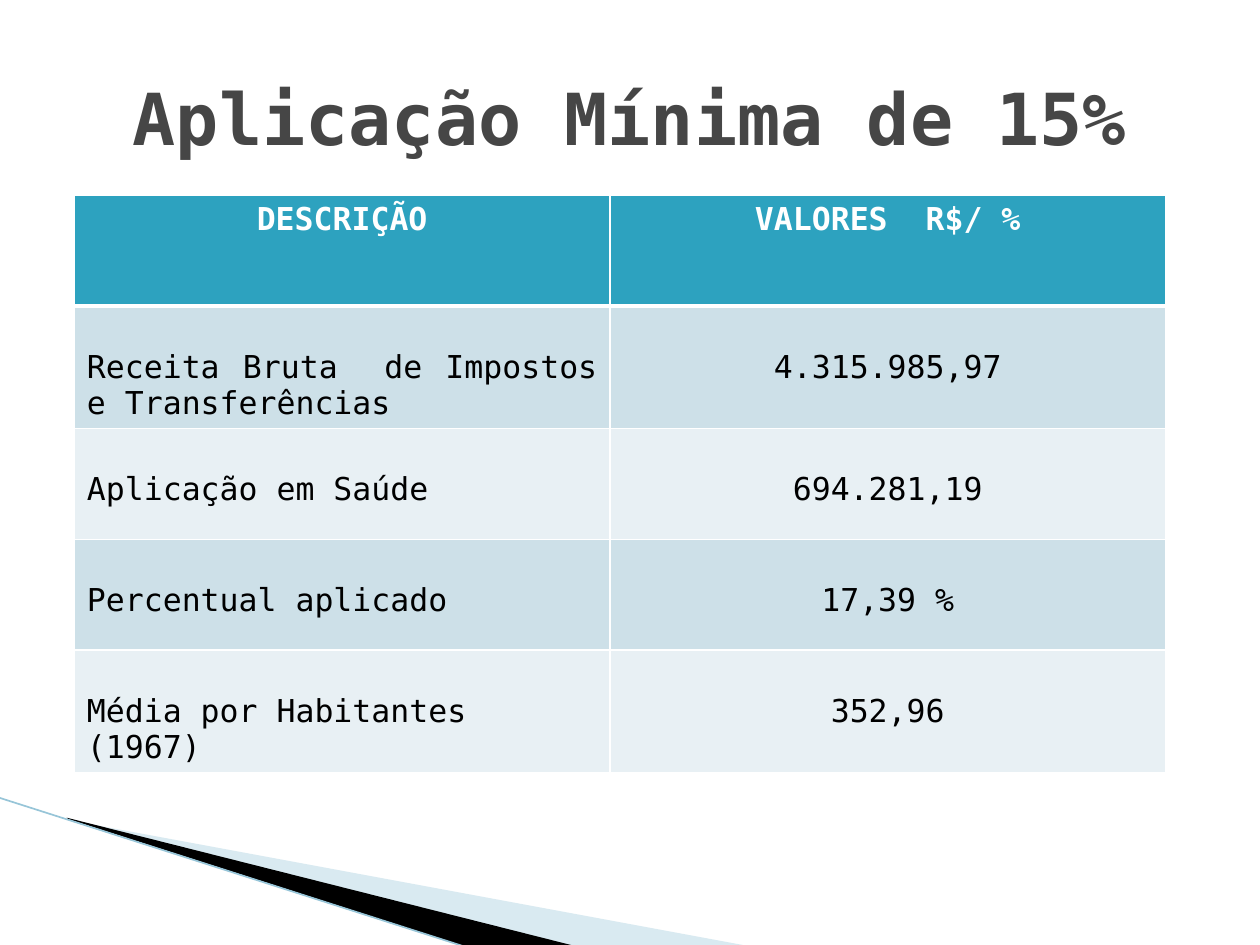
from typing import NamedTuple

from lxml import etree
from pptx import Presentation, util as u
from pptx.dml.color import RGBColor
from pptx.enum import shapes, text
from pptx.oxml.ns import qn

FONT = "DejaVu Sans Mono"
LEFT, MID, FULL = text.PP_ALIGN.LEFT, text.PP_ALIGN.CENTER, text.PP_ALIGN.JUSTIFY


class Wedge(NamedTuple):
    points: list[tuple[float, float]]
    color: str
    alpha: int = 100


class Row(NamedTuple):
    label: str
    value: str
    align: text.PP_ALIGN


WEDGES = [
    Wedge([(0.55, 6.51), (5.95, 7.51), (4.56, 7.51), (0.55, 6.5)], "A0CBDC", 40),
    Wedge([(0.53, 6.49), (4.57, 7.51), (3.72, 7.52), (0.54, 6.5)], "000000"),
]
ROWS = [
    Row("DESCRIÇÃO", "VALORES  R$/ %", MID),
    Row("Receita Bruta  de Impostos e Transferências", "4.315.985,97", FULL),
    Row("Aplicação em Saúde", "694.281,19", FULL),
    Row("Percentual aplicado", "17,39 %", LEFT),
    Row("Média por Habitantes (1967)", "352,96", LEFT),
]
WIDTHS = [4.25, 4.41]
HEIGHT = 0.88


def paint(part, color: str) -> None:
    part.solid()
    part.fore_color.rgb = RGBColor.from_string(color)


def write(frame, words: str, *, size: float = 18, color: str = "000000",
          bold: bool = False, align=MID) -> None:
    para = frame.paragraphs[0]
    para.alignment = align
    run = para.add_run()
    run.text = words
    run.font.name = FONT
    run.font.size = u.Pt(size)
    run.font.bold = bold
    run.font.color.rgb = RGBColor.from_string(color)


def draw_wedge(slide, wedge: Wedge) -> None:
    points = [(u.Inches(x), u.Inches(y)) for x, y in wedge.points]
    form = slide.shapes.build_freeform(*points[0])
    form.add_line_segments(points[1:], close=True)
    shape = form.convert_to_shape()
    shape.shadow.inherit = False
    shape.line.fill.background()
    paint(shape.fill, wedge.color)
    if wedge.alpha < 100:
        tone = next(shape.fill._xPr.iter(qn("a:srgbClr")))
        etree.SubElement(tone, qn("a:alpha"), val=str(wedge.alpha * 1000))


def draw_line(slide) -> None:
    ends = [u.Inches(n) for n in (-0.01, 6.33, 3.71, 7.52)]
    line = slide.shapes.add_connector(shapes.MSO_CONNECTOR.STRAIGHT, *ends)
    line.line.width = u.Pt(0.95)
    paint(line.line.fill, "97C5D8")
    etree.SubElement(line._element.spPr, qn("a:effectLst"))


def edge(cell, side: str, width: float) -> None:
    line = etree.SubElement(cell._tc.get_or_add_tcPr(), qn(f"a:ln{side}"),
                            w=str(u.Pt(width)))
    fill = etree.SubElement(line, qn("a:solidFill"))
    etree.SubElement(fill, qn("a:srgbClr"), val="FFFFFF")


def draw_table(slide) -> None:
    frame = slide.shapes.add_table(
        len(ROWS), len(WIDTHS), u.Inches(0.59), u.Inches(1.55),
        u.Inches(sum(WIDTHS)), u.Inches(HEIGHT * len(ROWS)))
    table = frame.table
    for col, width in zip(table.columns, WIDTHS):
        col.width = u.Inches(width)
    for i, row in enumerate(ROWS):
        head = i == 0
        table.rows[i].height = u.Inches(HEIGHT)
        band = "2DA2BF" if head else ("CDE0E8" if i % 2 else "E8F0F4")
        for j, (words, align) in enumerate([(row.label, row.align), (row.value, MID)]):
            cell = table.cell(i, j)
            for side in "LRTB":
                thick = (head and side == "B") or (i == 1 and side == "T")
                edge(cell, side, 3 if thick else 1)
            paint(cell.fill, band)
            cell.margin_top = u.Inches(0.05 if head else 0.34)
            write(cell.text_frame, words, bold=head, align=align,
                  color="FFFFFF" if head else "000000")


def main() -> None:
    deck = Presentation()
    deck.slide_width, deck.slide_height = u.Inches(10), u.Inches(7.5)
    slide = deck.slides.add_slide(deck.slide_layouts[5])
    paint(slide.background.fill, "FFFFFF")
    for wedge in WEDGES:
        draw_wedge(slide, wedge)
    draw_line(slide)
    title = slide.shapes.title
    title.left, title.top = u.Inches(0.5), u.Inches(0.3)
    title.width, title.height = u.Inches(9), u.Inches(1.25)
    title.text_frame.vertical_anchor = text.MSO_ANCHOR.MIDDLE
    write(title.text_frame, "Aplicação Mínima de 15%", size=41, color="464646", bold=True)
    draw_table(slide)
    deck.save("out.pptx")


if __name__ == "__main__":
    main()
